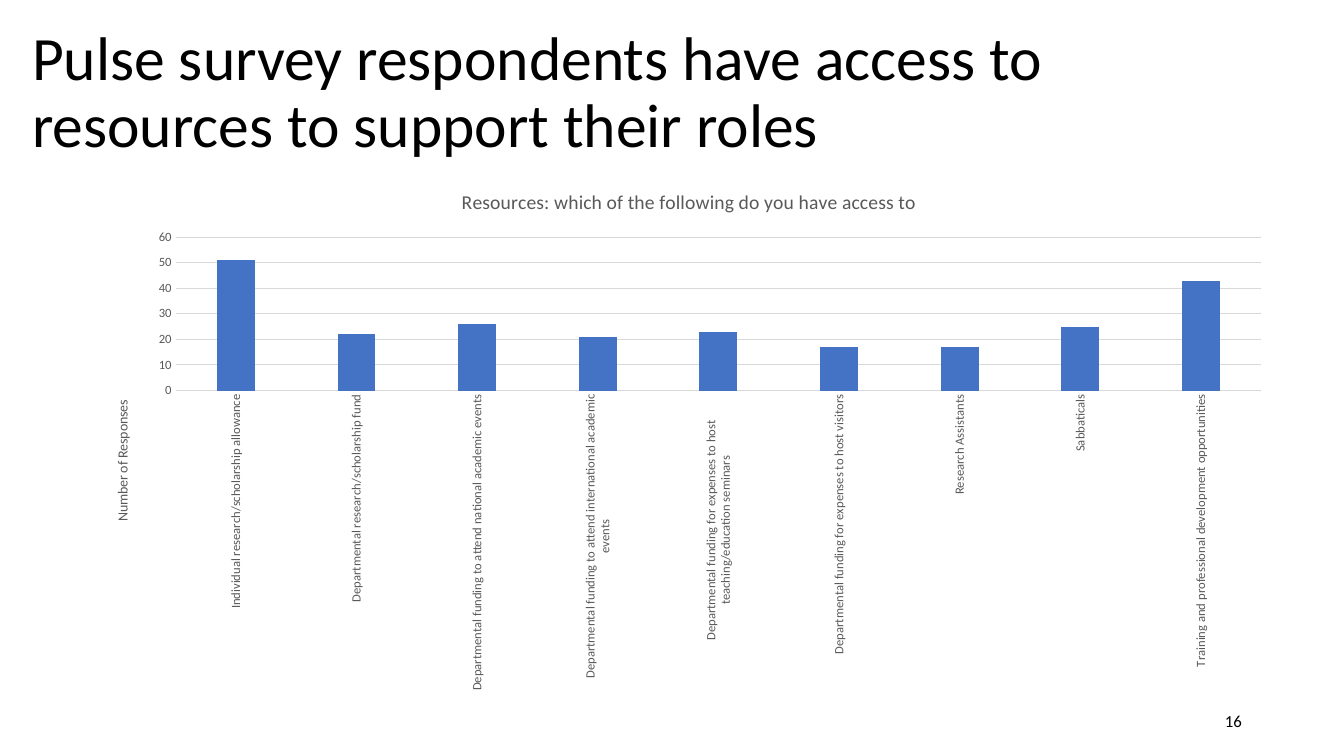
from lxml import etree
from pptx import Presentation
from pptx.chart.data import CategoryChartData
from pptx.dml.color import RGBColor
from pptx.enum.chart import XL_CHART_TYPE, XL_TICK_MARK
from pptx.enum.text import MSO_ANCHOR, PP_ALIGN
from pptx.util import Cm, Pt

COLUMNS = XL_CHART_TYPE.COLUMN_CLUSTERED
NO_TICK = XL_TICK_MARK.NONE
MIDDLE = MSO_ANCHOR.MIDDLE
LEFT, RIGHT = PP_ALIGN.LEFT, PP_ALIGN.RIGHT

FONT = "Calibri"
COLORS = {"text": "000000", "label": "595959", "rule": "D9D9D9", "bar": "4472C4"}

RESOURCES = {
    "Individual research/scholarship allowance": 51,
    "Departmental research/scholarship fund": 22,
    "Departmental funding to attend national academic events": 26,
    "Departmental funding to attend international academic events": 21,
    "Departmental funding for expenses to host teaching/education seminars": 23,
    "Departmental funding for expenses to host visitors": 17,
    "Research Assistants": 17,
    "Sabbaticals": 25,
    "Training and professional development opportunities": 43,
}


def color(name):
    return RGBColor.from_string(COLORS[name])


def style_font(font, size, color_name):
    font.name = FONT
    font.size = Pt(size)
    font.bold = False
    font.color.rgb = color(color_name)


def add_text(page, place, text, size, align=LEFT, spacing=1.0):
    box = page.shapes.add_textbox(*[Cm(length) for length in place])
    frame = box.text_frame
    frame.word_wrap = True
    frame.vertical_anchor = MIDDLE
    para = frame.paragraphs[0]
    para.alignment = align
    para.line_spacing = spacing
    span = para.add_run()
    span.text = text
    style_font(span.font, size, "text")


def set_title(owner, text, size):
    """Give a chart or an axis its title."""
    span = owner.text_frame.paragraphs[0].add_run()
    span.text = text
    style_font(span.font, size, "label")


def style_rule(line):
    line.color.rgb = color("rule")
    line.width = Pt(0.75)


def add_resource_chart(page, place):
    data = CategoryChartData()
    data.categories = list(RESOURCES)
    data.add_series("Series 1", list(RESOURCES.values()))
    frame = page.shapes.add_chart(COLUMNS, *[Cm(length) for length in place], data)
    chart = frame.chart
    style_font(chart.font, 10, "text")
    chart.has_legend = False
    set_title(chart.chart_title, "Resources: which of the following do you have access to", 14)
    chart.chart_title.include_in_layout = False

    # Columns
    plot = chart.plots[0]
    plot.vary_by_categories = False
    plot.gap_width = 219
    plot.overlap = -27
    fill = plot.series[0].format.fill
    fill.solid()
    fill.fore_color.rgb = color("bar")

    # Axes
    for axis in (chart.category_axis, chart.value_axis):
        axis.major_tick_mark = NO_TICK
        axis.minor_tick_mark = NO_TICK
        style_font(axis.tick_labels.font, 9, "label")
    style_rule(chart.category_axis.format.line)
    values = chart.value_axis
    values.minimum_scale, values.maximum_scale, values.major_unit = 0, 60, 10
    values.format.line.fill.background()
    values.has_major_gridlines = True
    style_rule(values.major_gridlines.format.line)
    set_title(values.axis_title, "Number of Responses", 10)

    # Upright category labels and value title
    turn_upright(chart.category_axis._element.find("{*}txPr/{*}bodyPr"))
    turn_upright(values.axis_title.text_frame._txBody.find("{*}bodyPr"))


def turn_upright(body: etree._Element):
    body.set("rot", "-5400000")
    body.set("vert", "horz")


def main():
    deck = Presentation()
    deck.slide_width, deck.slide_height = Cm(33.87), Cm(19.05)
    page = deck.slides.add_slide(deck.slide_layouts[6])

    add_text(page, (0.56, 0.53, 29.21, 3.68),
             "Pulse survey respondents have access to resources to support their roles",
             44, spacing=0.9)
    add_text(page, (23.93, 17.65, 7.62, 1.02), "16", 12, align=RIGHT)
    add_resource_chart(page, (2.34, 4.24, 30.05, 13.44))

    deck.save("out.pptx")


if __name__ == "__main__":
    main()
